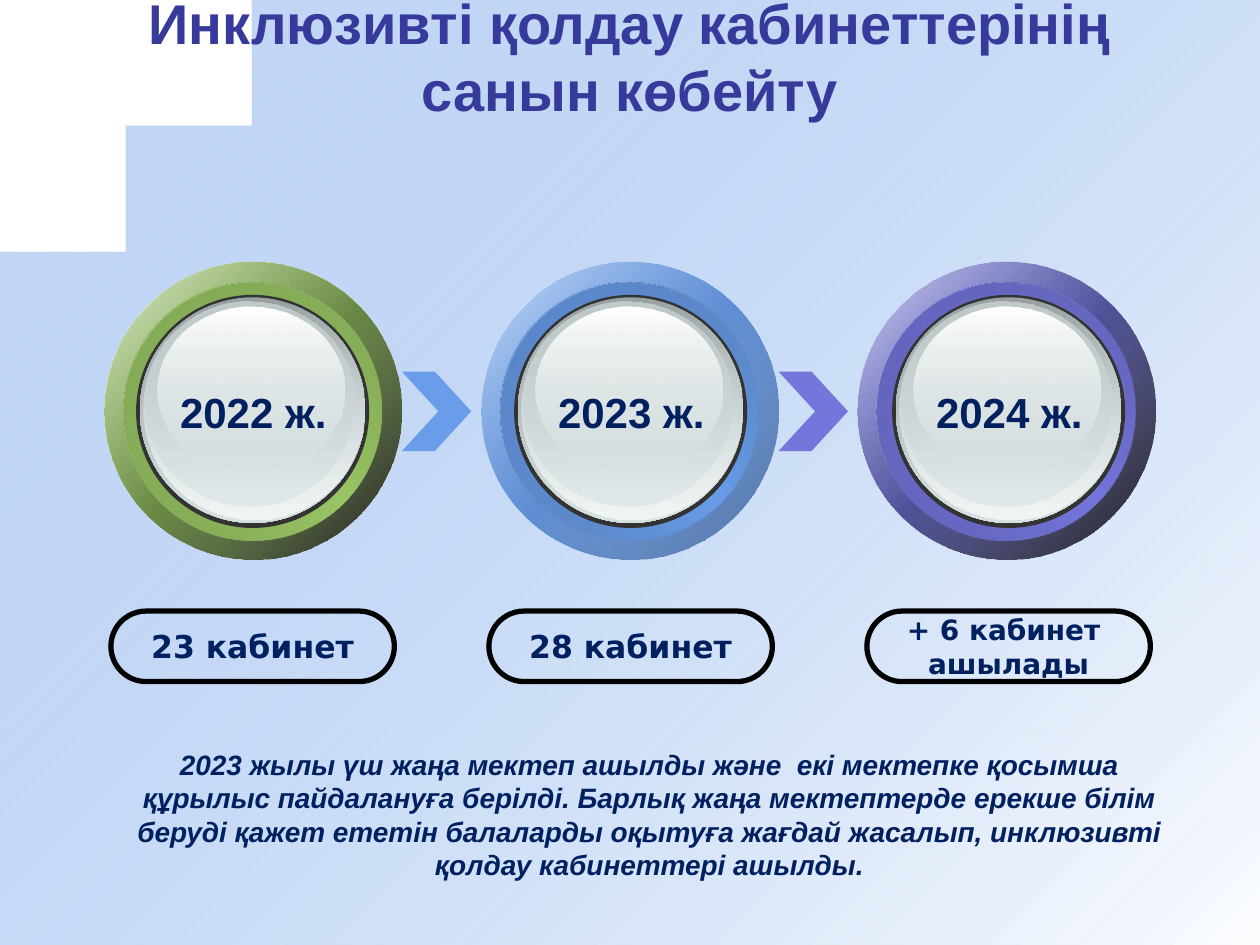
"""Build a slide on the growing number of inclusive support rooms, 2022 to 2024."""
from lxml import etree
from pptx import Presentation
from pptx import util as u
from pptx.dml.color import RGBColor
from pptx.enum import shapes, text
from pptx.oxml.ns import qn

HEADING = "Инклюзивті қолдау кабинеттерінің санын көбейту"
SUMMARY = (
    "2023 жылы үш жаңа мектеп ашылды және  екі мектепке қосымша құрылыс "
    "пайдалануға берілді. Барлық жаңа мектептерде ерекше білім беруді қажет "
    "ететін балаларды оқытуға жағдай жасалып, инклюзивті қолдау кабинеттері ашылды."
)

WHITE, BLACK = RGBColor(255, 255, 255), RGBColor(0, 0, 0)
INDIGO, NAVY = RGBColor(0x37, 0x39, 0x9B), RGBColor(0x00, 0x20, 0x60)
CHARCOAL = RGBColor(0x33, 0x33, 0x33)
GREEN, BLUE, VIOLET = (RGBColor.from_string(c) for c in ("9AC664", "699DE9", "7476DC"))
SILVER, PALE = RGBColor.from_string("D6E1E2"), RGBColor.from_string("F2F5F5")
STEEL, ASH = RGBColor.from_string("99A1A2"), RGBColor.from_string("C1CBCC")

YEARS = [
    dict(year="2022 ж.", rooms=["23 кабинет"], size=18, main=GREEN,
         dark="76984D", mid="7EA352", shade=(BLACK, 90)),
    dict(year="2023 ж.", rooms=["28 кабинет"], size=18, main=BLUE,
         dark="5078B2", mid="5681BF", shade=("4B70A7", 100)),
    dict(year="2024 ж.", rooms=["+ 6 кабинет ", "ашылады"], size=16, main=VIOLET,
         dark="595AA8", mid="5F61B5", shade=(BLACK, 90)),
]
GLASS = [
    (1.11, 2.36, 1.79, 1.79, [(0, STEEL, 100), (100, SILVER, 100)]),
    (1.14, 2.37, 1.75, 1.75, [(0, SILVER, 0), (100, PALE, 100)]),
    (1.15, 2.39, 1.66, 1.63, [(0, ASH, 100), (100, SILVER, 48)]),
    (1.25, 2.43, 1.48, 1.32, [(0, WHITE, 100), (100, SILVER, 38)]),
]
CURVES = [
    [(2.58, 0), (1.9, 0.16), (1.16, 0.83), (0.98, 1.07)],
    [(0.98, 1.07), (0.8, 1.32), (0.16, 1.94), (0, 3.01)],
]
CORNERS = [(0, 7.5), (10, 7.5), (10, 0)]
RING_STEP, DIAL_STEP = 2.99, 3


def box(left, top, width, height):
    return [u.Inches(v) for v in (left, top, width, height)]


def paint_gradient(shape, stops, angle):
    shape.fill.background()
    empty = shape._element.spPr.find(qn("a:noFill"))
    gradient = etree.Element(qn("a:gradFill"), rotWithShape="1")
    stop_list = etree.SubElement(gradient, qn("a:gsLst"))
    for position, color, opacity in stops:
        stop = etree.SubElement(stop_list, qn("a:gs"), pos=str(position * 1000))
        rgb = etree.SubElement(stop, qn("a:srgbClr"), val=str(color))
        if opacity < 100:
            etree.SubElement(rgb, qn("a:alpha"), val=str(opacity * 1000))
    etree.SubElement(gradient, qn("a:lin"), ang=str(angle * 60000), scaled="0")
    empty.getparent().replace(empty, gradient)


def plain(shape):
    shape.shadow.inherit = False
    shape.line.fill.background()
    return shape


def add_disc(slide, left, top, width, height, stops=None, angle=90):
    disc = plain(slide.shapes.add_shape(shapes.MSO_SHAPE.OVAL, *box(left, top, width, height)))
    if stops:
        paint_gradient(disc, stops, angle)
    else:
        disc.fill.solid()
        disc.fill.fore_color.rgb = CHARCOAL


def write(shape, lines, size, color=NAVY, font="Arial", italic=False, wrap=True,
          anchor=text.MSO_ANCHOR.MIDDLE):
    frame = shape.text_frame
    frame.auto_size = text.MSO_AUTO_SIZE.NONE
    frame.word_wrap = wrap
    frame.vertical_anchor = anchor
    for index, line in enumerate(lines):
        paragraph = frame.add_paragraph() if index else frame.paragraphs[0]
        paragraph.alignment = text.PP_ALIGN.CENTER
        run = paragraph.add_run()
        run.text = line
        run.font.size, run.font.name = u.Pt(size), font
        run.font.bold, run.font.italic = True, italic
        run.font.color.rgb = color


def add_backdrop(slide):
    outline = [
        tuple((1 - t) ** 3 * a + 3 * (1 - t) ** 2 * t * b + 3 * (1 - t) * t * t * c + t ** 3 * d
              for a, b, c, d in zip(*curve))
        for curve in CURVES for t in (step / 24 for step in range(25))
    ]
    builder = slide.shapes.build_freeform(*outline[0], scale=u.Inches(1))
    builder.add_line_segments(outline[1:] + CORNERS, close=True)
    backdrop = plain(builder.convert_to_shape())
    paint_gradient(backdrop, [(0, BLUE, 39), (100, WHITE, 100)], 45)
    slide.shapes._spTree.insert(2, backdrop._element)


def add_year(slide, index, item):
    ring, dial = index * RING_STEP, index * DIAL_STEP
    main, dark = item["main"], item["dark"]
    if index:
        chevron = plain(slide.shapes.add_shape(
            shapes.MSO_SHAPE.CHEVRON, *box(0.2 + ring, 2.95, 0.55, 0.63)))
        chevron.adjustments[0] = 0.525
        chevron.fill.solid()
        chevron.fill.fore_color.rgb = main

    rings = [
        (0.83, 2.08, 2.36, [(0, WHITE, 100), (50, main, 100), (100, WHITE, 100)], 45),
        (0.83, 2.08, 2.36, [(0, main, 32), (100, *item["shade"])], 45),
        (0.98, 2.24, 2.05, [(0, dark, 100), (50, main, 100), (100, dark, 100)], 315),
        (0.98, 2.24, 2.05, [(0, item["mid"], 100), (100, main, 0)], 45),
    ]
    for left, top, size, stops, angle in rings:
        add_disc(slide, left + ring, top, size, size, stops, angle)
    add_disc(slide, 1.08 + dial, 2.34, 1.85, 1.85)
    for left, top, width, height, stops in GLASS:
        add_disc(slide, left + dial, top, width, height, stops)

    label = slide.shapes.add_textbox(*box(1.32 + dial, 3.02, 1.38, 0.5))
    write(label, [item["year"]], 24, wrap=False, anchor=text.MSO_ANCHOR.TOP)

    pill = slide.shapes.add_shape(
        shapes.MSO_SHAPE.ROUNDED_RECTANGLE, *box(0.88 + dial, 4.85, 2.25, 0.56))
    pill.shadow.inherit = False
    pill.adjustments[0] = 0.5
    pill.fill.background()
    pill.line.color.rgb, pill.line.width = BLACK, u.Pt(3)
    write(pill, item["rooms"], item["size"], font="DejaVu Sans", wrap=False)


def main():
    deck = Presentation()
    deck.slide_width, deck.slide_height = u.Inches(10), u.Inches(7.5)
    slide = deck.slides.add_slide(deck.slide_layouts[5])
    add_backdrop(slide)

    heading = slide.shapes.title
    heading.left, heading.top, heading.width, heading.height = box(0.5, 0.13, 9, 0.62)
    write(heading, [HEADING], 32, color=INDIGO)

    for index, item in enumerate(YEARS):
        add_year(slide, index, item)

    summary = slide.shapes.add_textbox(*box(0.89, 5.88, 8.53, 1.18))
    write(summary, [SUMMARY], 16, italic=True, anchor=text.MSO_ANCHOR.TOP)
    deck.save("out.pptx")


if __name__ == "__main__":
    main()
